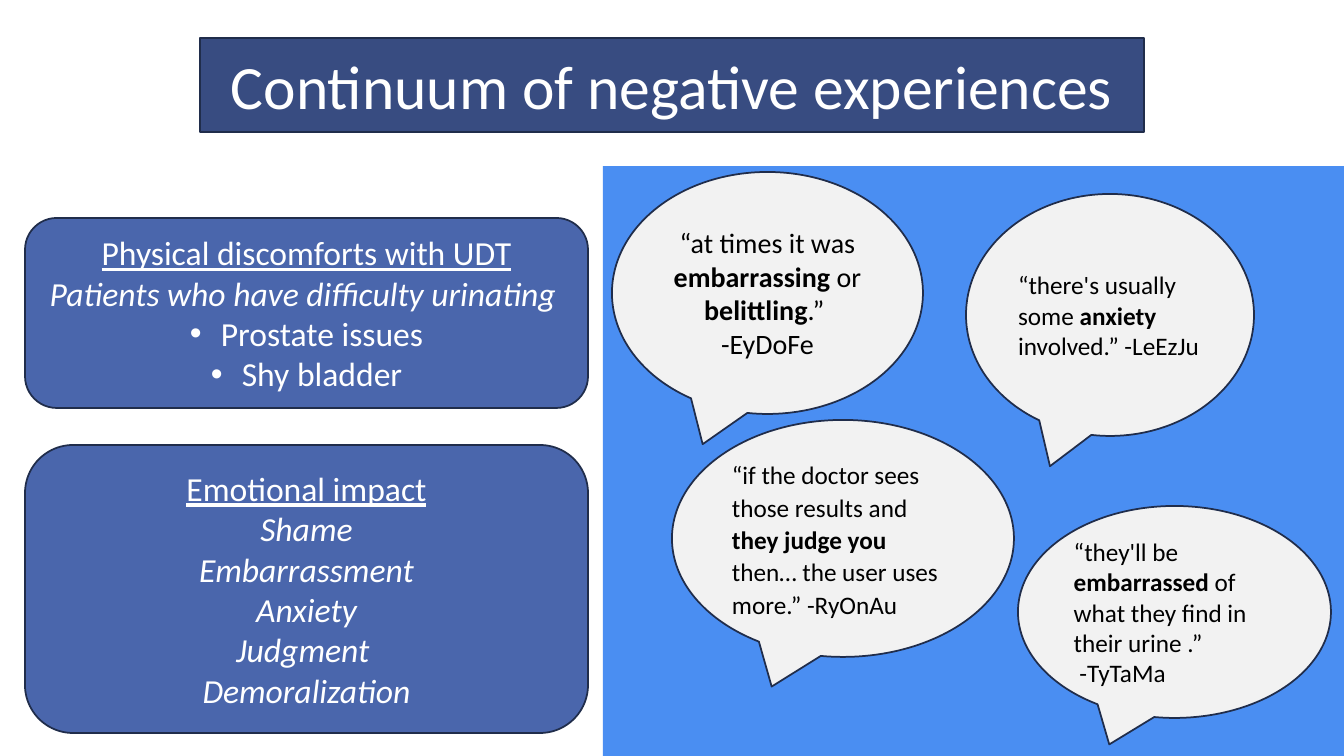
"""Build a slide on negative experiences, with two lists and four quotes."""
from pptx import Presentation, util as u
from pptx.dml.color import RGBColor
from pptx.enum import shapes, text
from pptx.oxml import parse_xml
from pptx.oxml.ns import nsdecls, qn

KIND = shapes.MSO_SHAPE
MID = text.PP_ALIGN.CENTER
LEFT = text.PP_ALIGN.LEFT
EDGE = "202D4B"


def px(n):
    """Turn pixels into EMU."""
    return u.Emu(round(n * 914400 / 100.8))


def rgb(code):
    """Turn a hex string into a colour."""
    return RGBColor.from_string(code)


def paint(shape, fill, edge=None):
    """Set fill and outline, without a shadow."""
    shape.shadow.inherit = False
    shape.fill.solid()
    shape.fill.fore_color.rgb = rgb(fill)
    if edge:
        shape.line.color.rgb = rgb(edge)
        shape.line.width = u.Pt(1.25)
    else:
        shape.line.fill.background()


def write(shape, paras, size, ink, align):
    """Fill a shape with paragraphs of (text, style) runs."""
    frame = shape.text_frame
    frame.word_wrap = True
    frame.auto_size = text.MSO_AUTO_SIZE.NONE
    frame.vertical_anchor = text.MSO_ANCHOR.MIDDLE
    for i, runs in enumerate(paras):
        para = frame.add_paragraph() if i else frame.paragraphs[0]
        para.alignment = align
        para.space_before = para.space_after = u.Pt(0)
        for words, style in runs:
            run = para.add_run()
            run.text = words
            font = run.font
            font.name, font.size = "Calibri", u.Pt(size)
            font.color.rgb = rgb(ink)
            font.bold, font.italic = "b" in style, "i" in style
            font.underline = "u" in style
    return frame


def mark(para, dot):
    """Give a paragraph a hanging bullet, or none."""
    props = para._p.get_or_add_pPr()
    step = px(31) if dot else 0
    props.set("marL", str(step))
    props.set("indent", str(-step))
    tag = 'buChar {} char="•"' if dot else "buNone {}"
    props.append(parse_xml(f"<a:{tag.format(nsdecls('a'))}/>"))


def panel(holder, box, fill, paras, size):
    """Turn a placeholder into a rounded panel with centred text."""
    holder.left, holder.top, holder.width, holder.height = map(px, box)
    form = parse_xml(f'<a:prstGeom {nsdecls("a")} '
                     'prst="flowChartAlternateProcess"><a:avLst/></a:prstGeom>')
    holder._element.spPr.find(qn("a:xfrm")).addnext(form)
    paint(holder, fill, EDGE)
    return write(holder, paras, size, "FFFFFF", MID)


def listing(holder, box, paras, dots=()):
    """Make a list panel; dots names the bulleted rows."""
    frame = panel(holder, box, "4A66AC", paras, 24)
    frame.margin_left = frame.margin_right = 0
    for i, para in enumerate(frame.paragraphs):
        mark(para, i in dots)


def quote(slide, box, paras, size=18, align=LEFT):
    """Add a speech bubble."""
    bubble = slide.shapes.add_shape(KIND.OVAL_CALLOUT, *map(px, box))
    paint(bubble, "F2F2F2", EDGE)
    return write(bubble, paras, size, "000000", align)


def main():
    """Build and save the slide."""
    deck = Presentation()
    deck.slide_width, deck.slide_height = px(1344), px(756)
    slide = deck.slides.add_slide(deck.slide_layouts[3])
    title, body, mood = slide.placeholders

    panel(title, (200, 38, 944, 94), "384C81",
          [[("Continuum of negative experiences", "")]], 44)
    listing(body, (25, 218, 563, 190), [
        [("Physical discomforts with UDT", "u")],
        [("Patients who have difficulty urinating ", "i")],
        [("Prostate issues", "")],
        [("Shy bladder", "")]], dots=(2, 3))
    moods = ["Shame", "Embarrassment", "Anxiety", "Judgment ", "Demoralization"]
    listing(mood, (25, 445, 563, 288),
            [[("Emotional impact", "u")]] + [[(m, "i")] for m in moods])

    back = slide.shapes.add_shape(KIND.RECTANGLE, *map(px, (603, 166, 741, 590)))
    paint(back, "4A8EF2")
    quote(slide, (612, 172, 311, 242), [
        [("“at times it was ", ""), ("embarrassing", "b"), (" or ", ""),
         ("belittling", "b"), (".” ", "")],
        [("-EyDoFe", "")]], 20, MID)
    quote(slide, (966, 194, 288, 242), [
        [("“there's usually some ", ""), ("anxiety", "b"),
         (" involved.” -LeEzJu", "")]])
    judge = quote(slide, (672, 420, 342, 237), [
        [("“if the doctor sees those results and ", ""),
         ("they judge you ", "b"),
         ("then… the user uses more.” -RyOnAu", "")]])
    judge.paragraphs[0].line_spacing = 1.07
    judge.paragraphs[0].space_after = u.Pt(8)
    quote(slide, (1018, 506, 313, 212), [
        [("“they'll be ", ""), ("embarrassed", "b"),
         (" of what they find in their urine .”", "")],
        [(" -TyTaMa", "")]])
    deck.save("out.pptx")


if __name__ == "__main__":
    main()
